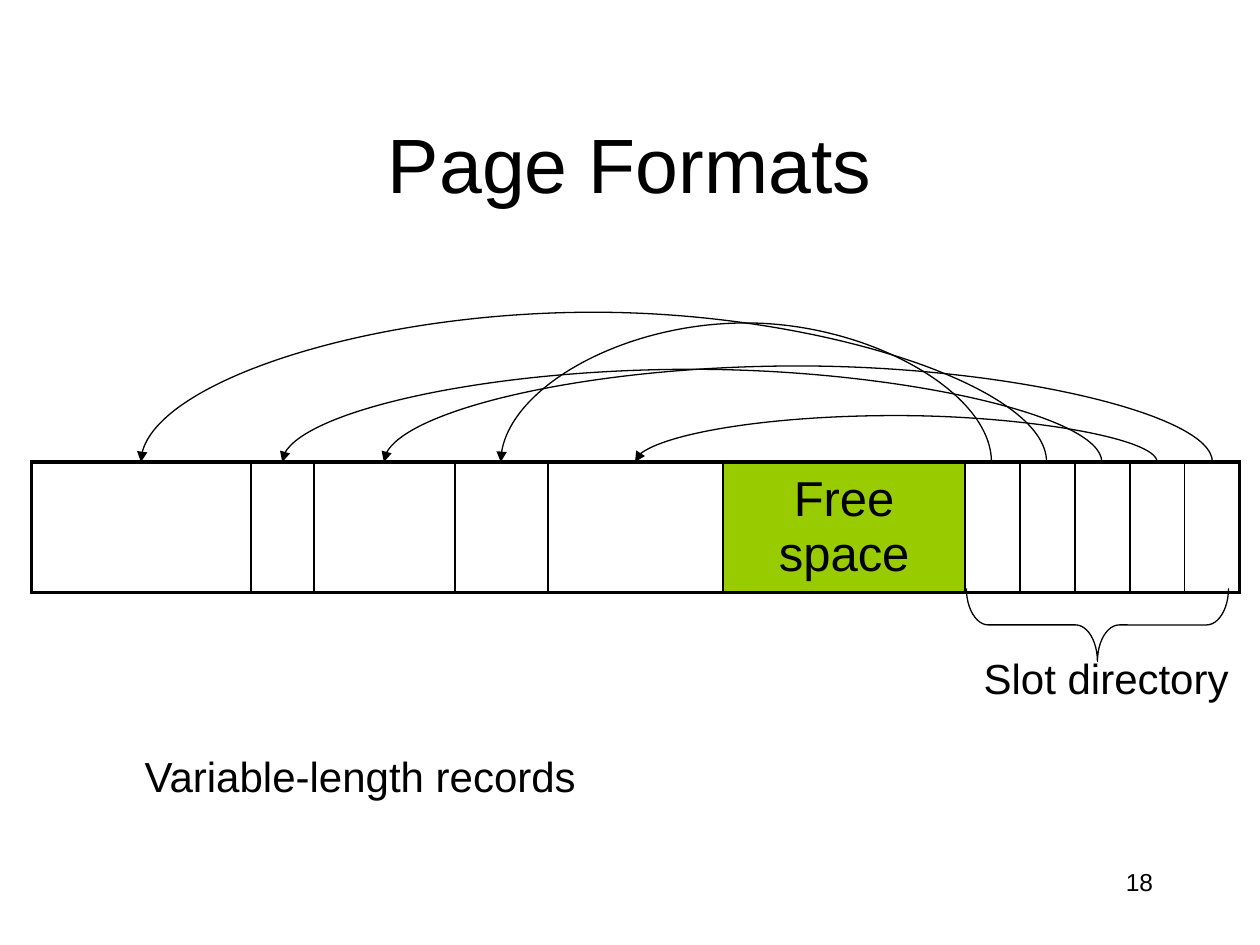
from lxml import etree
from pptx import Presentation
from pptx.dml.color import RGBColor
from pptx.enum.shapes import MSO_CONNECTOR, MSO_SHAPE
from pptx.enum.text import MSO_ANCHOR, PP_ALIGN
from pptx.oxml.ns import qn
from pptx.util import Pt

CURVE = MSO_CONNECTOR.CURVE
RIGHT_BRACE = MSO_SHAPE.RIGHT_BRACE
TOP, MIDDLE = MSO_ANCHOR.TOP, MSO_ANCHOR.MIDDLE
LEFT, CENTER, RIGHT = PP_ALIGN.LEFT, PP_ALIGN.CENTER, PP_ALIGN.RIGHT

BLACK, GREEN = "000000", "99CC00"
PAGE_LEFT, PAGE_TOP, PAGE_HEIGHT = 18, 264, 69.5
RECORD_WIDTHS = [125.3, 36, 80.6, 53.3, 100.1]
FREE_WIDTH, SLOT_WIDTH, SLOT_COUNT = 138.2, 31.4, 5
FREE_COLUMN = len(RECORD_WIDTHS)
THIN, THICK = 1, 2.25
CURVE_DEPTH = 0.12
POINTERS = [
    (692.8, 219.4, 58),
    (661.2, 362.9, 28),
    (629.6, 161.3, 56),
    (598.1, 80.6, 90.5),
    (566.6, 286.2, 84),
]


def color(hex_string):
    return RGBColor.from_string(hex_string)


def style_text(frame, text, size, align):
    paragraph = frame.paragraphs[0]
    paragraph.text = text
    paragraph.alignment = align
    paragraph.font.name = "Arial"
    paragraph.font.size = Pt(size)
    paragraph.font.color.rgb = color(BLACK)


def add_text(slide, box, text, size, align=LEFT, anchor=TOP, wrap=True):
    frame = slide.shapes.add_textbox(*map(Pt, box)).text_frame
    frame.word_wrap = wrap
    frame.vertical_anchor = anchor
    style_text(frame, text, size, align)


def set_border(cell, side, width):
    properties = cell._tc.get_or_add_tcPr()
    line = etree.SubElement(properties, qn(f"a:ln{side}"), w=str(Pt(width)))
    fill = etree.SubElement(line, qn("a:solidFill"))
    etree.SubElement(fill, qn("a:srgbClr"), val=BLACK)


def add_page_table(slide):
    widths = RECORD_WIDTHS + [FREE_WIDTH] + [SLOT_WIDTH] * SLOT_COUNT
    table = slide.shapes.add_table(
        1, len(widths), Pt(PAGE_LEFT), Pt(PAGE_TOP), Pt(sum(widths)), Pt(PAGE_HEIGHT)
    ).table
    table.first_row = False
    table.horz_banding = False
    last = len(widths) - 1
    for index, width in enumerate(widths):
        table.columns[index].width = Pt(width)
        cell = table.cell(0, index)
        set_border(cell, "L", THICK if index == 0 else THIN)
        set_border(cell, "R", THICK if index == last else THIN)
        set_border(cell, "T", THICK)
        set_border(cell, "B", THICK)
        if index == FREE_COLUMN:
            cell.fill.solid()
            cell.fill.fore_color.rgb = color(GREEN)
            cell.vertical_anchor = MIDDLE
            style_text(cell.text_frame, "Free space", 28, CENTER)
        else:
            cell.fill.background()


def add_pointer(slide, slot_x, record_x, rise):
    middle, half_span = (slot_x + record_x) / 2, (slot_x - record_x) / 2
    half_depth = CURVE_DEPTH / 2
    connector = slide.shapes.add_connector(
        CURVE,
        Pt(middle + half_depth), Pt(PAGE_TOP + half_span),
        Pt(middle - half_depth), Pt(PAGE_TOP - half_span),
    )
    connector.line.color.rgb = color(BLACK)
    connector.line.width = Pt(0.75)
    properties = connector._element.spPr
    properties.find(qn("a:xfrm")).set("rot", "16200000")
    guides = properties.find(qn("a:prstGeom")).find(qn("a:avLst"))
    bend = round(-rise / CURVE_DEPTH * 100000)
    etree.SubElement(guides, qn("a:gd"), name="adj1", fmla=f"val {bend}")
    etree.SubElement(properties.find(qn("a:ln")), qn("a:tailEnd"), type="triangle")
    etree.SubElement(properties, qn("a:effectLst"))


def add_slot_brace(slide):
    brace = slide.shapes.add_shape(RIGHT_BRACE, Pt(606.2), Pt(282.2), Pt(41.8), Pt(149.8))
    brace.rotation = 90
    brace.adjustments[0] = 0.3
    brace.adjustments[1] = 0.5
    brace.shadow.inherit = False
    brace.fill.background()
    brace.line.color.rgb = color(BLACK)
    brace.line.width = Pt(0.75)


def main():
    presentation = Presentation()
    presentation.slide_width, presentation.slide_height = Pt(720), Pt(540)
    slide = presentation.slides.add_slide(presentation.slide_layouts[6])
    add_text(slide, (516, 492, 150, 36), "18", 14, RIGHT)
    add_text(slide, (54, 48, 612, 90), "Page Formats", 44, CENTER, MIDDLE)
    add_page_table(slide)
    for pointer in POINTERS:
        add_pointer(slide, *pointer)
    add_slot_brace(slide)
    add_text(slide, (555, 369.5, 155, 36.5), "Slot directory", 24, wrap=False)
    add_text(slide, (75.6, 425.5, 263.5, 36.5), "Variable-length records", 24, wrap=False)
    presentation.save("out.pptx")


if __name__ == "__main__":
    main()
